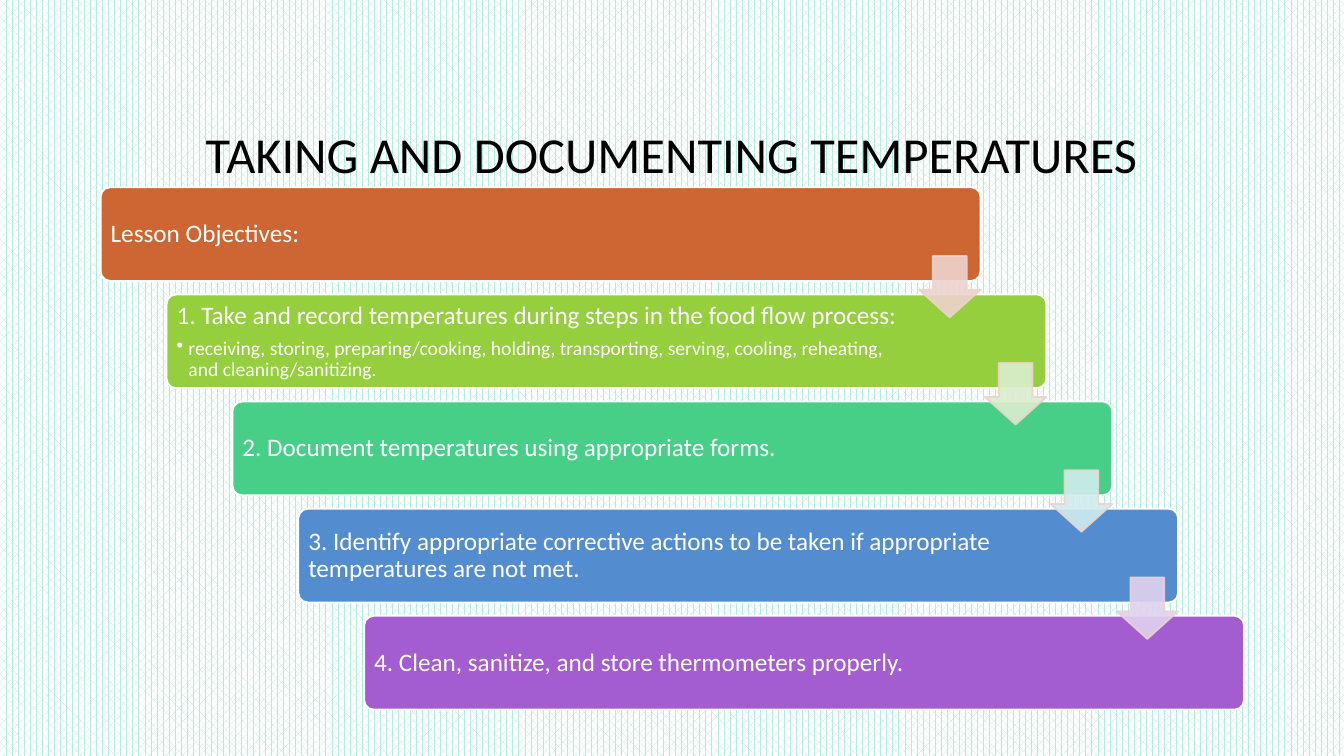
from lxml import etree
from pptx import Presentation
from pptx.dml.color import RGBColor
from pptx.enum.dml import MSO_PATTERN
from pptx.enum.shapes import MSO_SHAPE as Shape
from pptx.enum.text import MSO_ANCHOR as Anchor, PP_ALIGN as Align
from pptx.oxml.ns import qn
from pptx.util import Cm, Pt

COLORS = {
    "pattern": "B7EADE", "white": "FFFFFF", "black": "000000",
    "arrow_line": "EDD3CE",
    "orange": "CE6633", "lime": "95CF3E", "green": "48CF87",
    "blue": "538DD0", "purple": "A35DD1",
    "pale_orange": "EDD3CE", "pale_lime": "DBEDCF",
    "pale_green": "D1ECEE", "pale_blue": "E0D2EE",
}
FONT = "Calibri"


def add_block(preset, left, top, width, height, adjustments, fill, line):
    shape = slide.shapes.add_shape(preset, Cm(left), Cm(top), Cm(width), Cm(height))
    shape.shadow.inherit = False
    for index, value in enumerate(adjustments):
        shape.adjustments[index] = value
    shape.fill.solid()
    shape.fill.fore_color.rgb = RGBColor.from_string(COLORS[fill])
    shape.line.color.rgb = RGBColor.from_string(COLORS[line])
    shape.line.width = Pt(1.25)
    return shape


def add_run(paragraph, text, size, color):
    paragraph.line_spacing = 0.9
    run = paragraph.add_run()
    run.text = text
    run.font.name = FONT
    run.font.size = Pt(size)
    run.font.color.rgb = RGBColor.from_string(COLORS[color])


presentation = Presentation()
presentation.slide_width = Cm(33.87)
presentation.slide_height = Cm(19.05)
slide = presentation.slides.add_slide(presentation.slide_layouts[6])

# Patterned background
background = slide.background.fill
background.patterned()
background.pattern = MSO_PATTERN.PERCENT_60
background.fore_color.rgb = RGBColor.from_string(COLORS["pattern"])
background.back_color.rgb = RGBColor.from_string(COLORS["white"])

# Title
title = slide.shapes.add_textbox(Cm(2.54), Cm(1.73), Cm(28.78), Cm(4.45))
title.text_frame.word_wrap = True
title.text_frame.vertical_anchor = Anchor.MIDDLE
paragraph = title.text_frame.paragraphs[0]
paragraph.alignment = Align.CENTER
add_run(paragraph, "TAKING AND DOCUMENTING TEMPERATURES", 36, "black")

# Staircase of objectives: color, heading, detail
steps = [
    ("orange", "Lesson Objectives:", None),
    ("lime", "1. Take and record temperatures during steps in the food flow process:",
     "receiving, storing, preparing/cooking, holding, transporting, serving, "
     "cooling, reheating, and cleaning/sanitizing."),
    ("green", "2. Document temperatures using appropriate forms.", None),
    ("blue", "3. Identify appropriate corrective actions to be taken if appropriate "
     "temperatures are not met.", None),
    ("purple", "4. Clean, sanitize, and store thermometers properly.", None),
]
STEP_X, STEP_Y = 1.66, 2.7
for index, (color, heading, detail) in enumerate(steps):
    left, top = 2.54 + index * STEP_X, 4.72 + index * STEP_Y
    add_block(Shape.ROUNDED_RECTANGLE, left, top, 22.17, 2.36, [0.1], color, "white")

    label = slide.shapes.add_textbox(Cm(left + 0.07), Cm(top + 0.07), Cm(18.82), Cm(2.23))
    frame = label.text_frame
    frame.word_wrap = True
    frame.vertical_anchor = Anchor.MIDDLE
    frame.margin_left = frame.margin_right = Cm(0.18)
    frame.margin_top = frame.margin_bottom = Cm(0.18)
    paragraph = frame.paragraphs[0]
    paragraph.space_after = Pt(6.3)
    add_run(paragraph, heading, 18, "white")

    if detail:
        paragraph = frame.add_paragraph()
        paragraph.level = 1
        properties = paragraph._p.get_or_add_pPr()
        properties.set("marL", str(Cm(0.3)))
        properties.set("indent", str(-Cm(0.3)))
        etree.SubElement(properties, qn("a:buChar")).set("char", "•")
        paragraph.space_after = Pt(2.1)
        add_run(paragraph, detail, 14, "white")

# Translucent arrows between the steps
for index, color in enumerate(["pale_orange", "pale_lime", "pale_green", "pale_blue"]):
    arrow = add_block(Shape.DOWN_ARROW, 23.16 + index * STEP_X, 6.45 + index * STEP_Y,
                      1.55, 1.55, [0.55, 0.45], color, "arrow_line")
    for color_node in arrow._element.spPr.iter(qn("a:srgbClr")):
        etree.SubElement(color_node, qn("a:alpha")).set("val", "90000")

presentation.save("out.pptx")
